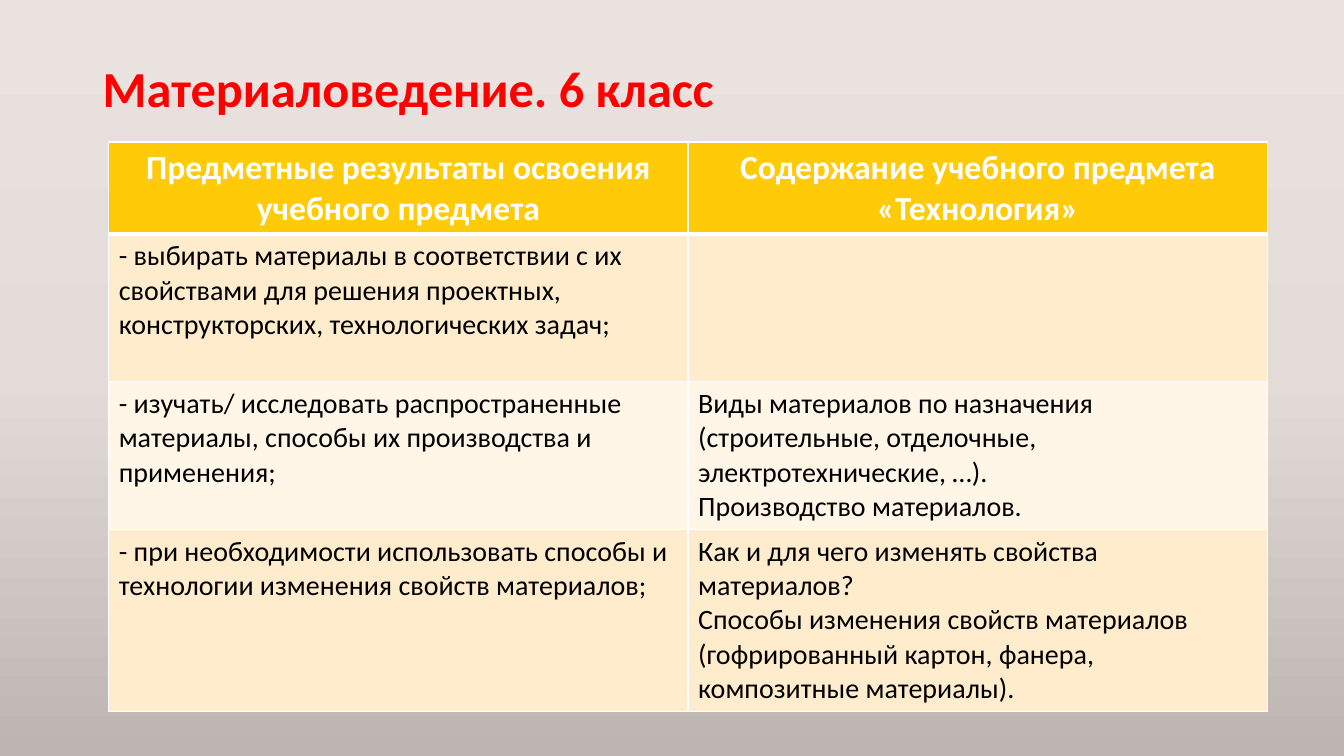
from copy import deepcopy
from dataclasses import dataclass

from lxml.etree import SubElement
from pptx import Presentation
from pptx.dml.color import RGBColor as RGB
from pptx.enum.text import MSO_ANCHOR as Anchor, MSO_AUTO_SIZE as AutoSize, PP_ALIGN as Align
from pptx.oxml.ns import qn
from pptx.util import Cm, Pt

TITLE = "Материаловедение. 6 класс"
HEADER = (
    "Предметные результаты освоения учебного предмета",
    "Содержание учебного предмета «Технология»",
)
# Each cell is a list of paragraphs
BODY = [
    (["- выбирать материалы в соответствии с их свойствами для решения проектных, "
      "конструкторских, технологических задач;"],
     []),
    (["- изучать/ исследовать распространенные материалы, способы их производства и применения;"],
     ["Виды материалов по назначения (строительные, отделочные, электротехнические, …).",
      "Производство материалов."]),
    (["- при необходимости использовать способы и технологии изменения свойств материалов;"],
     ["Как и для чего изменять свойства материалов?",
      "Способы изменения свойств материалов (гофрированный картон, фанера, "
      "композитные материалы)."]),
]
ROW_HEIGHTS = [Cm(2.32), Cm(3.72), Cm(3.72), Cm(4.58)]
COL_WIDTH = Cm(14.6)


@dataclass(frozen=True)
class Theme:
    font: str = "Calibri"
    title: str = "FF0000"
    header: str = "FFFFFF"
    text: str = "000000"
    border: str = "FFFFFF"
    header_fill: str = "FFCA08"
    bands: tuple = ("FFECCC", "FFF6E7")
    backdrop: tuple = ((0, "EBE3DF"), (0.5, "E2DBD8"), (1, "BCB5B2"))
    title_size: int = 36
    header_size: int = 24
    text_size: int = 20
    thin: int = 1
    thick: int = 3


THEME = Theme()


def set_font(p, size, color, bold):
    for r in p.runs:
        r.font.name = THEME.font
        r.font.size = Pt(size)
        r.font.bold = bold
        r.font.color.rgb = RGB.from_string(color)


def paint_background(slide):
    fill = slide.background.fill
    fill.gradient()
    fill.gradient_angle = 270
    stops = slide.element.find(".//" + qn("a:gsLst"))
    stops.insert(1, deepcopy(stops[0]))
    for stop, (position, color) in zip(fill.gradient_stops, THEME.backdrop):
        stop.position = position
        stop.color.rgb = RGB.from_string(color)


def set_borders(cell, top, bottom):
    """Draw the cell's four sides; top and bottom are widths in points."""
    tc_pr = cell._tc.get_or_add_tcPr()
    for side, width in (("L", THEME.thin), ("R", THEME.thin), ("T", top), ("B", bottom)):
        ln = SubElement(tc_pr, qn(f"a:ln{side}"), w=str(Pt(width)))
        SubElement(SubElement(ln, qn("a:solidFill")), qn("a:srgbClr"), val=THEME.border)


def fill_cell(cell, row, lines):
    is_header = row == 0
    set_borders(cell,
                top=THEME.thick if row == 1 else THEME.thin,
                bottom=THEME.thick if is_header else THEME.thin)
    color = THEME.header_fill if is_header else THEME.bands[(row - 1) % 2]
    cell.fill.solid()
    cell.fill.fore_color.rgb = RGB.from_string(color)
    cell.text_frame.text = "\n".join(lines)
    for p in cell.text_frame.paragraphs:
        if is_header:
            p.alignment = Align.CENTER
            set_font(p, THEME.header_size, THEME.header, True)
        else:
            set_font(p, THEME.text_size, THEME.text, False)


def add_title(slide):
    sp = slide.shapes.title
    sp.left, sp.top, sp.width, sp.height = Cm(2.33), Cm(1.01), Cm(29.21), Cm(2.57)
    tf = sp.text_frame
    tf.text = TITLE
    tf.auto_size = AutoSize.NONE
    tf.vertical_anchor = Anchor.MIDDLE
    p = tf.paragraphs[0]
    p.alignment = Align.LEFT
    p.line_spacing = 0.9
    set_font(p, THEME.title_size, THEME.title, True)


def add_results_table(slide):
    rows = [tuple([text] for text in HEADER)] + BODY
    table = slide.shapes.add_table(len(rows), len(HEADER), Cm(2.74), Cm(3.58),
                                   COL_WIDTH * len(HEADER), sum(ROW_HEIGHTS)).table
    for column in table.columns:
        column.width = COL_WIDTH
    for i, (height, cells) in enumerate(zip(ROW_HEIGHTS, rows)):
        table.rows[i].height = height
        for j, lines in enumerate(cells):
            fill_cell(table.cell(i, j), i, lines)


def main():
    prs = Presentation()
    prs.slide_width, prs.slide_height = Cm(33.87), Cm(19.05)
    slide = prs.slides.add_slide(prs.slide_layouts.get_by_name("Title Only"))
    paint_background(slide)
    add_title(slide)
    add_results_table(slide)
    prs.save("out.pptx")


if __name__ == "__main__":
    main()
